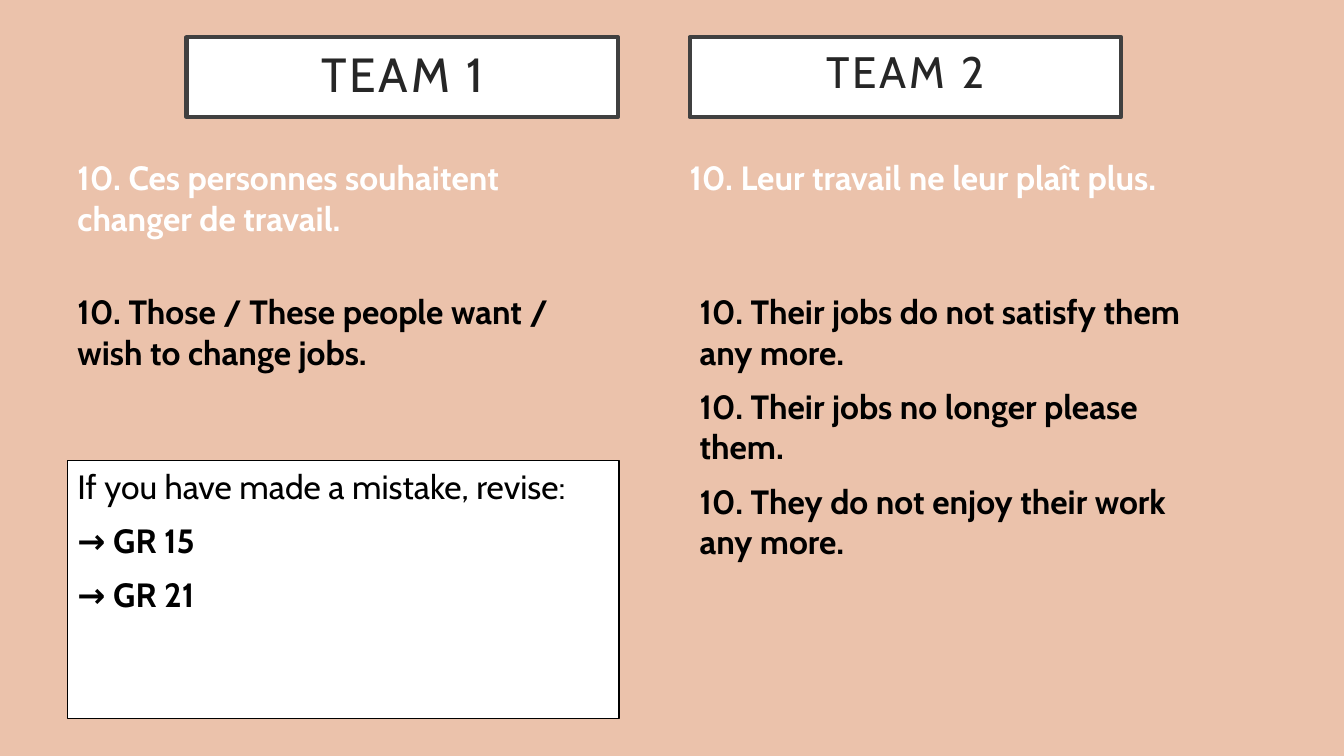
"""Build the two-team answer slide for question 10."""
from dataclasses import dataclass

from pptx import Presentation
from pptx.dml.color import RGBColor as Rgb
from pptx.enum.shapes import MSO_SHAPE as Preset
from pptx.enum.text import MSO_ANCHOR as Anchor, PP_ALIGN as Align
from pptx.slide import Slide
from pptx.text.text import TextFrame as Frame
from pptx.util import Inches, Pt


@dataclass(frozen=True)
class Theme:
    font: str = "Cabin"
    paper: Rgb = Rgb(0xEB, 0xC2, 0xAB)
    white: Rgb = Rgb(0xFF, 0xFF, 0xFF)
    black: Rgb = Rgb(0, 0, 0)
    title: Rgb = Rgb(0x26, 0x26, 0x26)
    frame: Rgb = Rgb(0x40, 0x40, 0x40)
    body: float = 24
    gap: float = 10
    track: float = 2


@dataclass(frozen=True)
class Box:
    left: float
    top: float
    width: float
    height: float


@dataclass(frozen=True)
class Head:
    text: str
    left: float
    size: float
    pitch: float


@dataclass(frozen=True)
class Block:
    box: Box
    lines: tuple[str, ...]
    color: Rgb


THEME = Theme()

HEADS = (
    Head("TEAM 1", 1.85, 34.2, 0.9),
    Head("TEAM 2", 6.84, 31.4, 0.7),
)

BLOCKS = (
    Block(Box(0.67, 1.51, 5.57, 1.43),
          ("10. Ces personnes souhaitent changer de travail.",), THEME.white),
    Block(Box(6.74, 1.51, 5.92, 2.1),
          ("10. Leur travail ne leur plaît plus.",), THEME.white),
    Block(Box(0.67, 2.84, 5.47, 1.6),
          ("10. Those / These people want / wish to change jobs.",),
          THEME.black),
    Block(Box(6.84, 2.84, 5.35, 2.81),
          ("10. Their jobs do not satisfy them any more.",
           "10. Their jobs no longer please them.",
           "10. They do not enjoy their work any more."), THEME.black),
)

NOTE = Box(0.67, 4.57, 5.47, 2.56)
INTRO = "If you have made a mistake, revise:"
TOPICS = ("→ GR 15", "→ GR 21")


def place(box: Box) -> tuple[Inches, Inches, Inches, Inches]:
    """Turn a box into slide lengths."""
    return (Inches(box.left), Inches(box.top),
            Inches(box.width), Inches(box.height))


def add_panel(slide: Slide, box: Box, line: Rgb, weight: float) -> Frame:
    """Draw a white outlined panel and return its text frame."""
    panel = slide.shapes.add_shape(Preset.RECTANGLE, *place(box))
    panel.shadow.inherit = False
    panel.fill.solid()
    panel.fill.fore_color.rgb = THEME.white
    panel.line.color.rgb = line
    panel.line.width = Pt(weight)
    return panel.text_frame


def write(frame: Frame, lines: tuple[str, ...], color: Rgb,
          plain: tuple[str, ...] = ()) -> None:
    """Fill a frame with body lines, bold unless listed as plain."""
    frame.word_wrap = True
    frame.vertical_anchor = Anchor.TOP
    for spot, line in enumerate(lines):
        para = frame.add_paragraph() if spot else frame.paragraphs[0]
        para.text = line
        para.alignment = Align.LEFT
        if spot:
            para.space_before = Pt(THEME.gap)
        para.font.name = THEME.font
        para.font.size = Pt(THEME.body)
        para.font.bold = line not in plain
        para.font.color.rgb = color


def add_head(slide: Slide, head: Head) -> None:
    """Draw a framed team title."""
    frame = add_panel(slide, Box(head.left, 0.37, 4.28, 0.79),
                      THEME.frame, 3)
    frame.word_wrap = True
    frame.vertical_anchor = Anchor.MIDDLE
    frame.margin_left = frame.margin_right = Inches(0.3)
    frame.margin_top = frame.margin_bottom = Inches(0.2)
    para = frame.paragraphs[0]
    para.text = head.text
    para.alignment = Align.CENTER
    para.line_spacing = head.pitch
    para.font.name = THEME.font
    para.font.size = Pt(head.size)
    para.font.color.rgb = THEME.title
    props = para.runs[0]._r.get_or_add_rPr()
    props.set("spc", str(int(THEME.track * 100)))


def main() -> None:
    """Build and save the slide."""
    deck = Presentation()
    deck.slide_width, deck.slide_height = Inches(13.33), Inches(7.5)
    slide = deck.slides.add_slide(deck.slide_layouts[6])
    slide.background.fill.solid()
    slide.background.fill.fore_color.rgb = THEME.paper
    for head in HEADS:
        add_head(slide, head)
    for block in BLOCKS:
        frame = slide.shapes.add_textbox(*place(block.box)).text_frame
        write(frame, block.lines, block.color)
    note = add_panel(slide, NOTE, THEME.black, 1)
    write(note, (INTRO, *TOPICS), THEME.black, plain=(INTRO,))
    deck.save("out.pptx")


if __name__ == "__main__":
    main()
